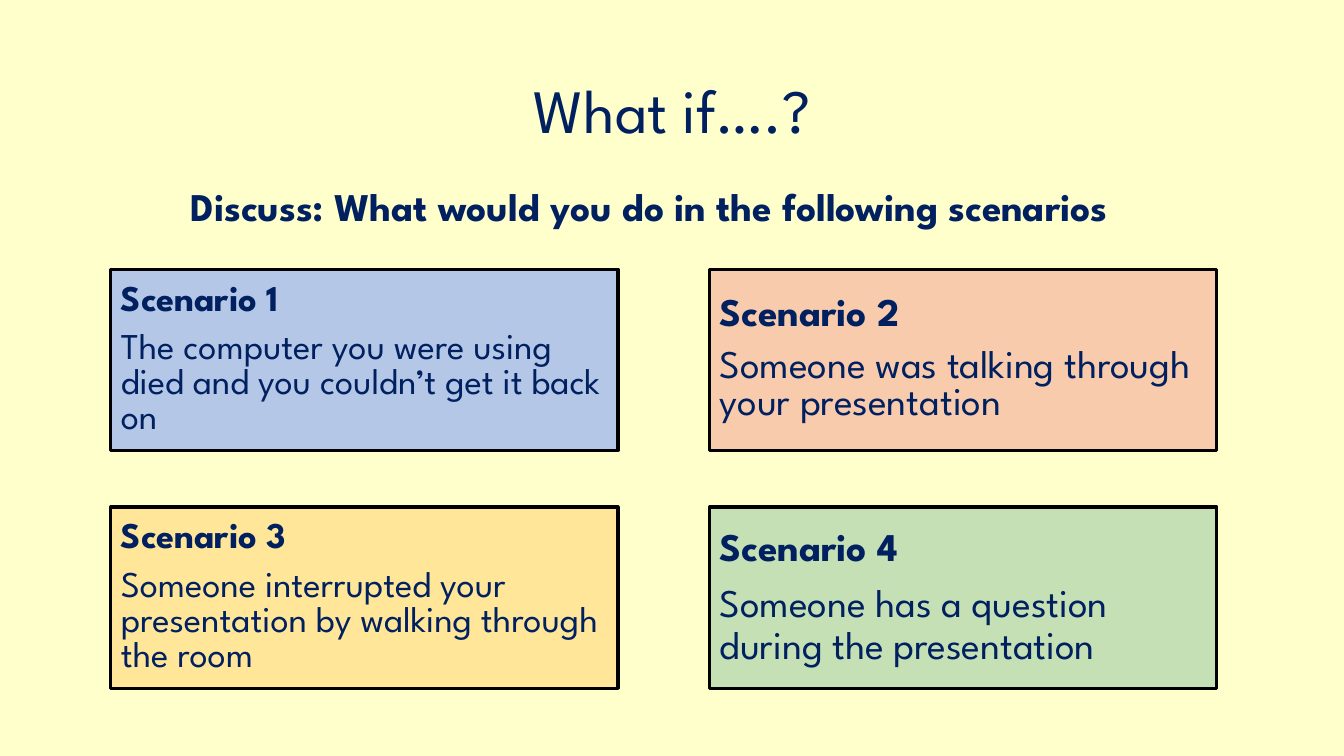
import pptx
import pptx.util
from pptx.dml.color import RGBColor
from pptx.enum.shapes import MSO_SHAPE
from pptx.enum.text import MSO_ANCHOR, PP_ALIGN
from pptx.util import Inches, Pt

FONT = "League Spartan"
NAVY = RGBColor(0x00, 0x20, 0x60)
BLACK = RGBColor(0x00, 0x00, 0x00)
CREAM = RGBColor(0xFF, 0xFF, 0xCC)
BLUE = RGBColor(0xB4, 0xC7, 0xE7)
PEACH = RGBColor(0xF8, 0xCB, 0xAD)
YELLOW = RGBColor(0xFF, 0xE6, 0x99)
GREEN = RGBColor(0xC5, 0xE0, 0xB4)

TITLE = "What if….?"
PROMPT = "Discuss: What would you do in the following scenarios"
# Scenario text, fill, font size, line spacing
SCENARIOS = [
    ("The computer you were using died and you couldn’t get it back on", BLUE, 25.9, 0.8),
    ("Someone was talking through your presentation", PEACH, 28, 0.8),
    ("Someone interrupted your presentation by walking through the room", YELLOW, 25.9, 0.8),
    ("Someone has a question during the presentation", GREEN, 28, 0.9),
]

COLUMNS = 2
CARD_LEFT, CARD_TOP = 1.1, 2.67
CARD_WIDTH, CARD_HEIGHT = 5.03, 1.8
COLUMN_STEP, ROW_STEP = 5.94, 2.36


def write_paragraph(paragraph, text, size, bold=False, spacing=0.9, before=10,
                    alignment=PP_ALIGN.LEFT):
    paragraph.text = text
    paragraph.alignment = alignment
    paragraph.line_spacing = spacing
    paragraph.space_before = Pt(before)
    paragraph.font.name = FONT
    paragraph.font.size = Pt(size)
    paragraph.font.bold = bold
    paragraph.font.color.rgb = NAVY


def add_heading(slide, box, text, size, bold, before, anchor):
    frame = slide.shapes.add_textbox(*map(Inches, box)).text_frame
    frame.word_wrap = True
    frame.vertical_anchor = anchor
    write_paragraph(frame.paragraphs[0], text, size, bold, before=before,
                    alignment=PP_ALIGN.CENTER)


def add_scenario(slide, index, text, fill, size, spacing):
    row, column = divmod(index, COLUMNS)
    card = slide.shapes.add_shape(
        MSO_SHAPE.RECTANGLE,
        Inches(CARD_LEFT + column * COLUMN_STEP), Inches(CARD_TOP + row * ROW_STEP),
        Inches(CARD_WIDTH), Inches(CARD_HEIGHT))
    card.shadow.inherit = False
    card.fill.solid()
    card.fill.fore_color.rgb = fill
    card.line.color.rgb = BLACK
    card.line.width = Pt(2.25)
    frame = card.text_frame
    frame.word_wrap = True
    frame.vertical_anchor = MSO_ANCHOR.MIDDLE
    write_paragraph(frame.paragraphs[0], f"Scenario {index + 1}", size, True, spacing)
    write_paragraph(frame.add_paragraph(), text, size, spacing=spacing)


def main():
    presentation = pptx.Presentation()
    presentation.slide_width = Inches(13.33)
    presentation.slide_height = Inches(7.5)
    slide = presentation.slides.add_slide(presentation.slide_layouts[6])
    slide.background.fill.solid()
    slide.background.fill.fore_color.rgb = CREAM

    add_heading(slide, (0.92, 0.4, 11.5, 1.45), TITLE, 44, False, 0, MSO_ANCHOR.MIDDLE)
    add_heading(slide, (1.1, 1.81, 10.68, 0.55), PROMPT, 28, True, 10, MSO_ANCHOR.TOP)
    for index, scenario in enumerate(SCENARIOS):
        add_scenario(slide, index, *scenario)

    presentation.save("out.pptx")


if __name__ == "__main__":
    main()
